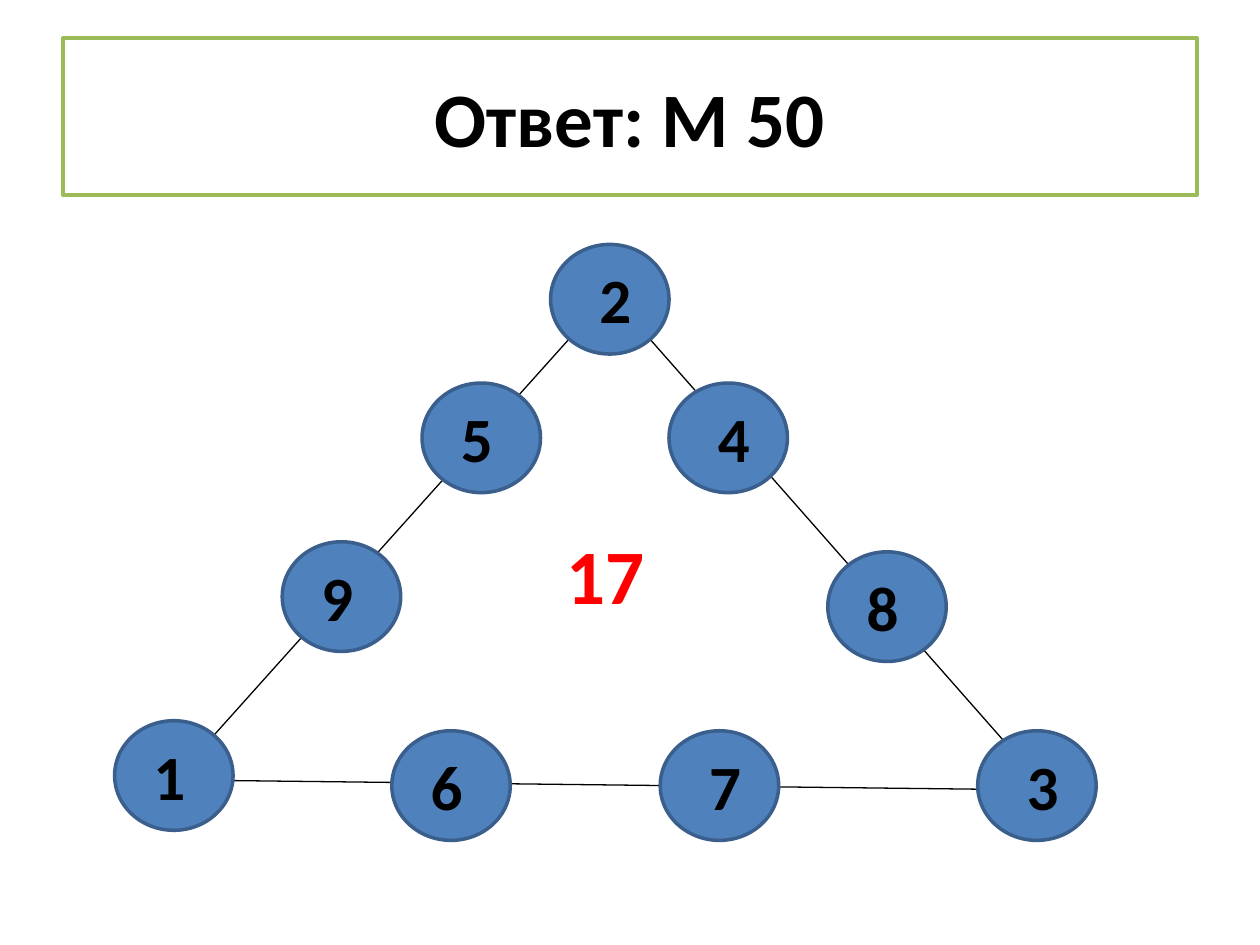
from dataclasses import dataclass

from lxml.etree import SubElement
from pptx import Presentation
from pptx.dml.color import RGBColor
from pptx.enum.shapes import MSO_CONNECTOR, MSO_SHAPE
from pptx.enum.text import MSO_ANCHOR, MSO_AUTO_SIZE, PP_ALIGN
from pptx.oxml.ns import qn
from pptx.util import Inches, Pt


@dataclass(frozen=True)
class Theme:
    font: str = "Calibri"
    ink: str = "000000"
    paper: str = "FFFFFF"
    frame: str = "9BBB59"
    circle: str = "4F81BD"
    circle_edge: str = "3A5F8C"
    accent: str = "FF0000"
    large: int = 44
    digit: int = 36
    outline: float = 2
    thin: float = 0.75


THEME = Theme()

CIRCLE_SIZE = (0.94, 0.87)
LABEL_SIZE = (0.87, 0.71)
LABEL_DROP = 0.08

# Triangle corners joined by the sides
CORNERS = [(1.38, 6.19), (8.31, 6.27), (4.84, 2.33)]

# Digit, left and top of its circle, rightward shift of its label
NODES = [
    ("1", 0.91, 5.72, 0),
    ("2", 4.37, 1.94, 0.08),
    ("3", 7.76, 5.8, 0.08),
    ("4", 5.31, 3.04, 0.08),
    ("5", 3.35, 3.04, 0),
    ("6", 3.11, 5.8, 0),
    ("7", 5.24, 5.8, 0.08),
    ("8", 6.57, 4.38, 0),
    ("9", 2.24, 4.3, 0),
]


def color(value):
    return RGBColor.from_string(value)


def add_side(page, start, end):
    points = [Inches(value) for value in (*start, *end)]
    side = page.shapes.add_connector(MSO_CONNECTOR.STRAIGHT, *points)
    side.line.color.rgb = color(THEME.ink)
    side.line.width = Pt(THEME.thin)
    SubElement(side.line._get_or_add_ln().getparent(), qn("a:effectLst"))


def add_outlined(page, kind, left, top, width, height, fill, edge):
    shape = page.shapes.add_shape(
        kind, Inches(left), Inches(top), Inches(width), Inches(height))
    shape.shadow.inherit = False
    shape.fill.solid()
    shape.fill.fore_color.rgb = color(fill)
    shape.line.color.rgb = color(edge)
    shape.line.width = Pt(THEME.outline)
    return shape


def write(frame, text, size, ink):
    para = frame.paragraphs[0]
    para.alignment = PP_ALIGN.CENTER
    span = para.add_run()
    span.text = text
    span.font.name = THEME.font
    span.font.size = Pt(size)
    span.font.bold = True
    span.font.color.rgb = color(ink)


def add_label(page, text, left, top, width, height, size, ink):
    box = page.shapes.add_textbox(
        Inches(left), Inches(top), Inches(width), Inches(height))
    box.text_frame.word_wrap = True
    box.text_frame.auto_size = MSO_AUTO_SIZE.SHAPE_TO_FIT_TEXT
    write(box.text_frame, text, size, ink)


def main():
    deck = Presentation()
    deck.slide_width, deck.slide_height = Inches(10), Inches(7.5)
    page = deck.slides.add_slide(deck.slide_layouts[6])

    # Triangle sides
    for start, end in zip(CORNERS, CORNERS[1:] + CORNERS[:1]):
        add_side(page, start, end)

    # Framed title
    title = add_outlined(page, MSO_SHAPE.RECTANGLE, 0.5, 0.3, 9, 1.25,
                         THEME.paper, THEME.frame)
    title.text_frame.vertical_anchor = MSO_ANCHOR.MIDDLE
    write(title.text_frame, "Ответ: М 50", THEME.large, THEME.ink)

    # Circles
    for _, left, top, _ in NODES:
        add_outlined(page, MSO_SHAPE.OVAL, left, top, *CIRCLE_SIZE,
                     THEME.circle, THEME.circle_edge)

    # Sum in the middle, then the digits
    add_label(page, "17", 4.37, 4.14, 0.87, 0.84, THEME.large, THEME.accent)
    for digit, left, top, shift in NODES:
        add_label(page, digit, left + shift, top + LABEL_DROP, *LABEL_SIZE,
                  THEME.digit, THEME.ink)

    deck.save("out.pptx")


if __name__ == "__main__":
    main()
